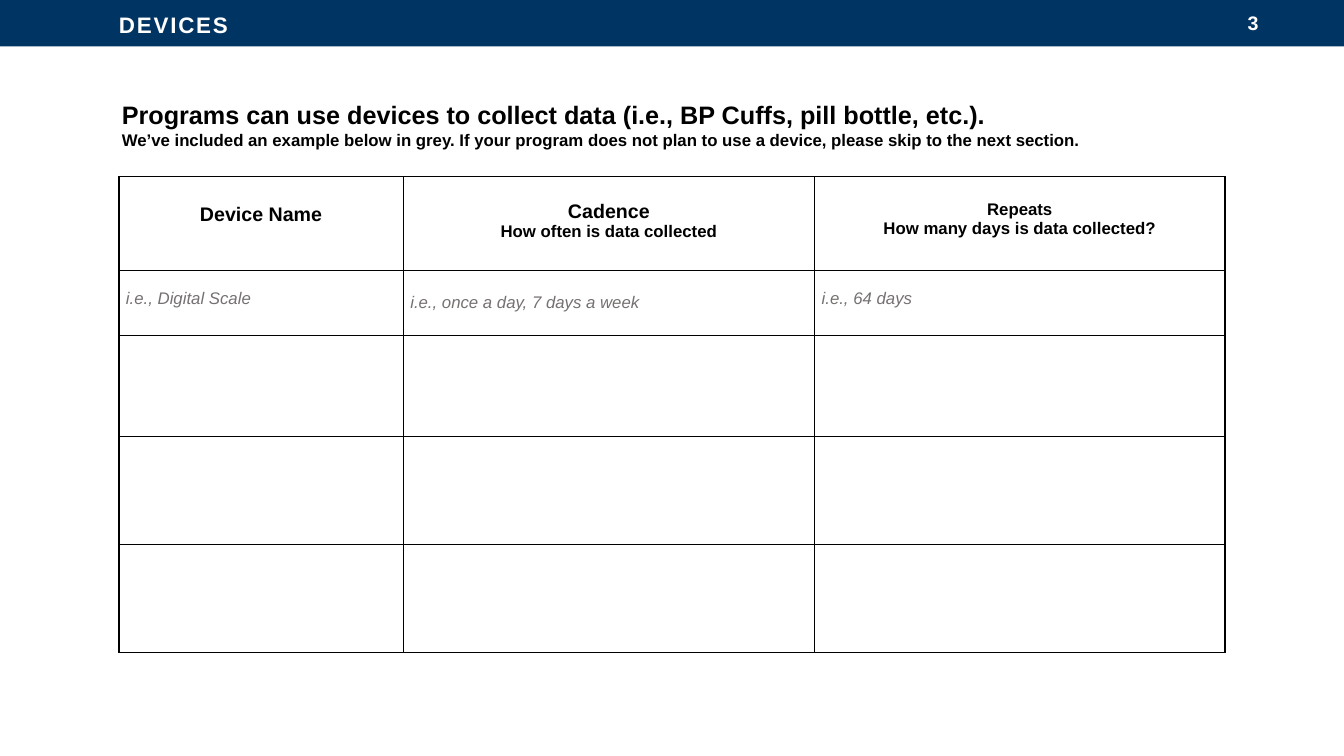
from dataclasses import dataclass
from pptx import Presentation
from pptx.dml.color import RGBColor
from pptx.enum.shapes import MSO_SHAPE as Shape
from pptx.enum.text import MSO_ANCHOR as Anchor, MSO_AUTO_SIZE as AutoSize, PP_ALIGN as Align
from pptx.oxml import parse_xml
from pptx.oxml.ns import nsdecls
from pptx.util import Inches, Pt


@dataclass(frozen=True)
class Theme:
    font: str = "Arial"
    navy: str = "003462"
    white: str = "FFFFFF"
    black: str = "000000"
    grey: str = "767171"
    heading: int = 18
    banner: int = 16
    label: int = 14
    body: int = 12
    border: int = 1
    letter_spacing: float = 1.3


class SlideBuilder:
    def __init__(self, presentation, theme):
        self.theme = theme
        self.slide = presentation.slides.add_slide(presentation.slide_layouts[5])

    def fill_text(self, frame, lines, align=Align.LEFT, color=None, bold=True, italic=False):
        for index, (text, size) in enumerate(lines):
            paragraph = frame.paragraphs[0] if index == 0 else frame.add_paragraph()
            paragraph.alignment = align
            run = paragraph.add_run()
            run.text = text
            run.font.color.rgb = RGBColor.from_string(color or self.theme.black)
            formats = {"name": self.theme.font, "size": Pt(size), "bold": bold, "italic": italic}
            for name, value in formats.items():
                setattr(run.font, name, value)

    def bar(self, left, top, width, height):
        shape = self.slide.shapes.add_shape(
            Shape.RECTANGLE, Inches(left), Inches(top), Inches(width), Inches(height))
        shape.shadow.inherit = False
        shape.fill.solid()
        shape.fill.fore_color.rgb = RGBColor.from_string(self.theme.navy)
        shape.line.fill.background()

    def title(self, text, left, top, width, height):
        shape = self.slide.shapes.title
        tree = self.slide.shapes.element
        tree.remove(shape.element)
        tree.append(shape.element)
        places = {"left": left, "top": top, "width": width, "height": height}
        for name, value in places.items():
            setattr(shape, name, Inches(value))
        frame = shape.text_frame
        frame.auto_size = AutoSize.NONE
        frame.vertical_anchor = Anchor.MIDDLE
        self.fill_text(frame, [(text, self.theme.banner)], color=self.theme.white)
        properties = frame.paragraphs[0].runs[0].font._element
        properties.set("spc", str(round(self.theme.letter_spacing * 100)))

    def text(self, lines, left, top, width, height, anchor=Anchor.TOP, **style):
        box = self.slide.shapes.add_textbox(
            Inches(left), Inches(top), Inches(width), Inches(height))
        box.text_frame.word_wrap = True
        box.text_frame.vertical_anchor = anchor
        self.fill_text(box.text_frame, lines, **style)

    def table(self, left, top, widths, heights):
        table = self.slide.shapes.add_table(
            len(heights), len(widths), Inches(left), Inches(top),
            Inches(sum(widths)), Inches(sum(heights))).table
        table.first_row = table.horz_banding = False
        for column, width in zip(table.columns, widths):
            column.width = Inches(width)
        for row, height in zip(table.rows, heights):
            row.height = Inches(height)
        for cell in table.iter_cells():
            self.border(cell)
            cell.fill.background()
        return table

    def border(self, cell):
        properties = cell._tc.get_or_add_tcPr()
        for side in ("lnL", "lnR", "lnT", "lnB"):
            properties.append(parse_xml(
                f'<a:{side} {nsdecls("a")} w="{Pt(self.theme.border)}"><a:solidFill>'
                f'<a:srgbClr val="{self.theme.black}"/></a:solidFill></a:{side}>'))

    def cell(self, cell, lines, margins, anchor=Anchor.TOP, **style):
        for name, value in margins.items():
            setattr(cell, f"margin_{name}", Inches(value))
        cell.vertical_anchor = anchor
        self.fill_text(cell.text_frame, lines, **style)


def main():
    presentation = Presentation()
    presentation.slide_width = Inches(13.33)
    presentation.slide_height = Inches(7.5)
    theme = Theme()
    builder = SlideBuilder(presentation, theme)

    builder.bar(0, 0, 13.33, 0.46)
    builder.title("DEVICES", 1.08, 0.01, 6, 0.46)
    builder.text([("3", theme.label)], 9.58, 0.02, 3, 0.4,
                 anchor=Anchor.MIDDLE, align=Align.RIGHT, color=theme.white)
    builder.text([
        ("Programs can use devices to collect data (i.e., BP Cuffs, pill bottle, etc.).",
         theme.heading),
        ("We’ve included an example below in grey. If your program does not plan to use "
         "a device, please skip to the next section.", theme.body),
    ], 1.11, 0.94, 11.1, 0.61)

    table = builder.table(1.18, 1.75, [2.82, 4.08, 4.07], [0.93, 0.65, 1, 1.07, 1.07])
    headers = [
        ([("Device Name", theme.label)], 0.27),
        ([("Cadence", theme.label), ("How often is data collected", theme.body)], 0.24),
        ([("Repeats", theme.body), ("How many days is data collected?", theme.body)], 0.24),
    ]
    for column, (lines, top) in enumerate(headers):
        builder.cell(table.cell(0, column), lines, {"top": top}, align=Align.CENTER)

    examples = [
        ("i.e., Digital Scale", 0.19, Anchor.TOP),
        ("i.e., once a day, 7 days a week", 0, Anchor.MIDDLE),
        ("i.e., 64 days", 0.19, Anchor.TOP),
    ]
    for column, (text, top, anchor) in enumerate(examples):
        margins = {"left": 0.07, "right": 0.07, "top": top, "bottom": 0}
        builder.cell(table.cell(1, column), [(text, theme.body)], margins, anchor,
                     color=theme.grey, bold=False, italic=True)

    presentation.save("out.pptx")


if __name__ == "__main__":
    main()
